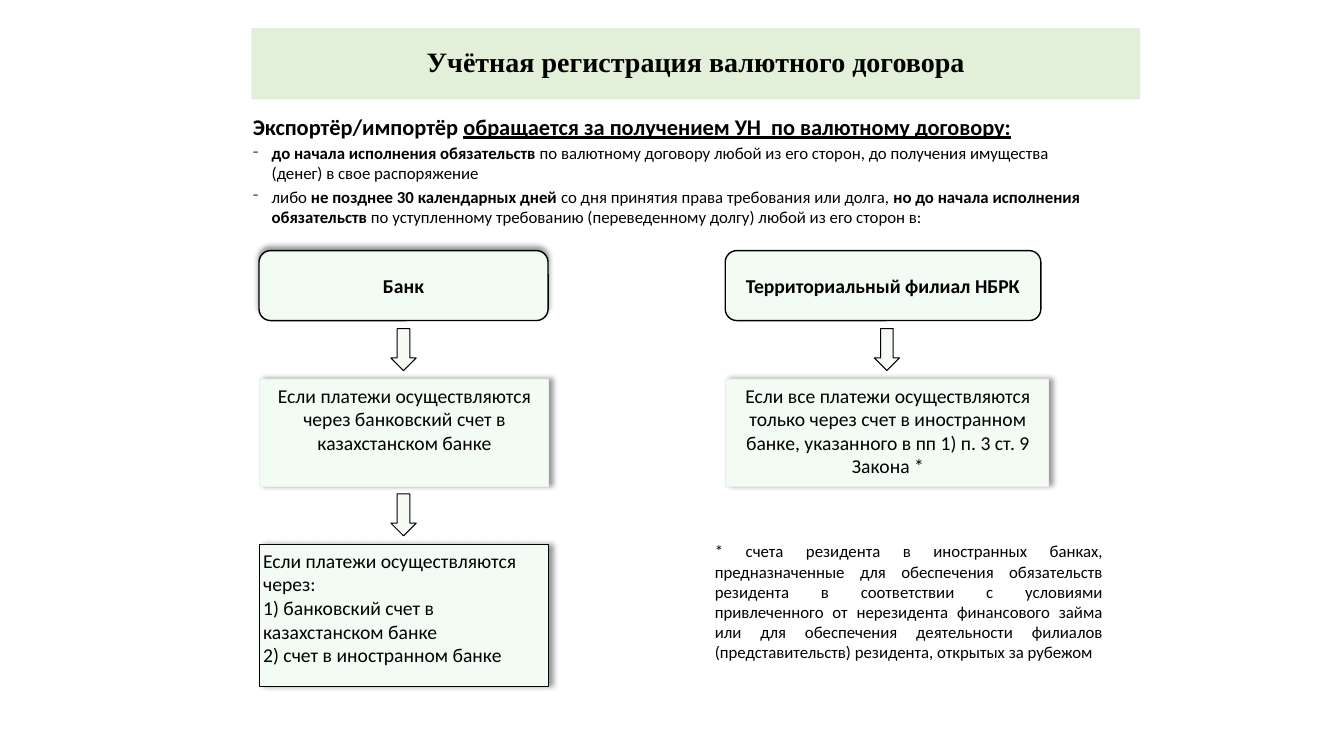
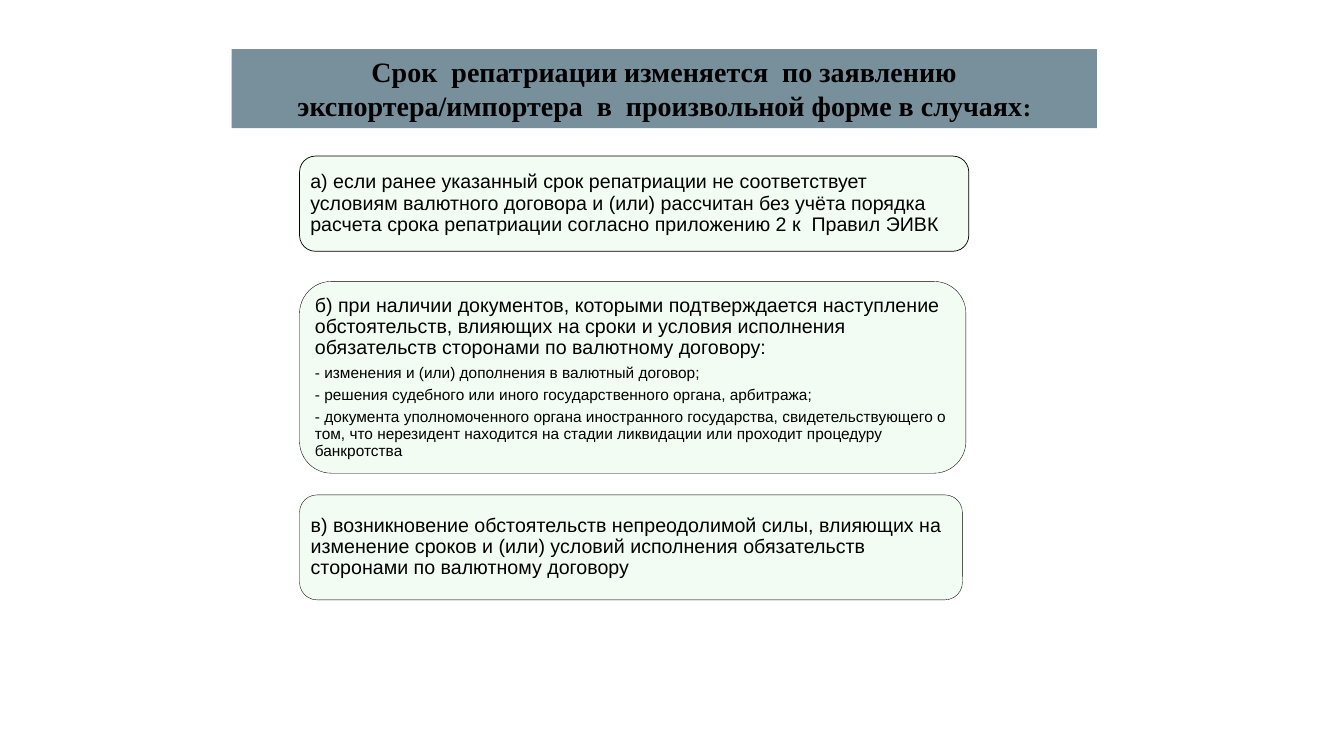
from lxml import etree
from pptx import Presentation
from pptx.dml.color import RGBColor
from pptx.enum.shapes import MSO_SHAPE
from pptx.enum.text import MSO_ANCHOR, PP_ALIGN
from pptx.oxml.ns import qn
from pptx.util import Pt

RECT, ROUNDED, DOWN_ARROW = MSO_SHAPE.RECTANGLE, MSO_SHAPE.ROUNDED_RECTANGLE, MSO_SHAPE.DOWN_ARROW
TOP, MIDDLE = MSO_ANCHOR.TOP, MSO_ANCHOR.MIDDLE
LEFT, CENTER, JUSTIFY = PP_ALIGN.LEFT, PP_ALIGN.CENTER, PP_ALIGN.JUSTIFY

COLORS = {
    "text": "000000",
    "outline": "000000",
    "soft_outline": "EEEEEE",
    "panel": "F2FCF2",
    "arrow": "F6FBF3",
    "green_band": "E2F0D9",
    "slate_band": "78909C",
    "dash": "376092",
    "shadow": "000000",
}
BODY_FONT, TITLE_FONT, CASE_FONT = "Calibri", "Times New Roman", "Arial"
INSETS = (7.2, 3.6, 7.2, 3.6)
CARD_INSETS = (3, 3.6, 1.5, 3.6)
CASE_INSETS = (4.3, 4.3, 4.3, 4.3)
SHADOW_RIGHT, SHADOW_UP = 0, 270
EMU_PER_POINT = 12700


def rgb(name):
    return RGBColor.from_string(COLORS[name])


def add_shadow(shape, angle):
    effects = shape._element.spPr.find(qn("a:effectLst"))
    shadow = etree.SubElement(
        effects, qn("a:outerShdw"), blurRad=str(4 * EMU_PER_POINT),
        dist=str(3 * EMU_PER_POINT), dir=str(angle * 60000), algn="ctr", rotWithShape="0")
    color = etree.SubElement(shadow, qn("a:srgbClr"), val=COLORS["shadow"])
    etree.SubElement(color, qn("a:alpha"), val="40000")


def add_panel(slide, kind, box, fill, outline=None, weight=1, shadow=None):
    panel = slide.shapes.add_shape(kind, *map(Pt, box))
    panel.shadow.inherit = False
    panel.fill.solid()
    panel.fill.fore_color.rgb = rgb(fill)
    if outline:
        panel.line.color.rgb = rgb(outline)
        panel.line.width = Pt(weight)
    else:
        panel.line.fill.background()
    if shadow is not None:
        add_shadow(panel, shadow)
    return panel


def prepare_frame(shape, anchor=TOP, insets=INSETS):
    frame = shape.text_frame
    frame.word_wrap = True
    frame.vertical_anchor = anchor
    frame.margin_left, frame.margin_top, frame.margin_right, frame.margin_bottom = map(Pt, insets)
    return frame


def style_paragraph(paragraph, size, font=BODY_FONT, bold=False, align=LEFT):
    paragraph.alignment = align
    for run in paragraph.runs:
        run.font.size = Pt(size)
        run.font.name = font
        run.font.bold = bold
        run.font.color.rgb = rgb("text")


def fill_text(shape, text, size, font=BODY_FONT, bold=False, align=LEFT, anchor=TOP, insets=INSETS):
    frame = prepare_frame(shape, anchor, insets)
    frame.text = text
    for paragraph in frame.paragraphs:
        style_paragraph(paragraph, size, font, bold, align)
    return frame


def add_title(slide, box, band, text, spacing=1.0):
    title = add_panel(slide, RECT, box, band)
    frame = fill_text(title, text, 20, TITLE_FONT, True, CENTER, MIDDLE)
    frame.paragraphs[0].line_spacing = spacing
    return frame


def add_dash(paragraph, hanging):
    properties = paragraph._p.get_or_add_pPr()
    properties.set("marL", str(int(Pt(hanging))))
    properties.set("indent", str(-int(Pt(hanging))))
    color = etree.SubElement(properties, qn("a:buClr"))
    etree.SubElement(color, qn("a:srgbClr"), val=COLORS["dash"])
    etree.SubElement(properties, qn("a:buChar"), char="-")


def add_runs(paragraph, parts, size):
    for text, _ in parts:
        paragraph.add_run().text = text
    style_paragraph(paragraph, size)
    for run, (_, bold) in zip(paragraph.runs, parts):
        run.font.bold = bold


def add_intro(slide, box, heading, terms):
    frame = prepare_frame(slide.shapes.add_textbox(*map(Pt, box)))
    opening = frame.paragraphs[0]
    add_runs(opening, [(part, True) for part in heading], 16)
    opening.runs[-1].font.underline = True
    for parts in terms:
        term = frame.add_paragraph()
        add_dash(term, 13.5)
        add_runs(term, parts, 12)
        term.space_before = Pt(2.4)


def add_arrow(slide, center, top, gap):
    width, height = 18, 30
    box = (center - width / 2, top + (gap - height) / 2, width, height)
    add_panel(slide, DOWN_ARROW, box, "arrow", "outline", 0.75)


def add_route(slide, box, head, head_width, head_shadow, cards):
    left, top, width = box
    gap, head_height = 41.5, 50
    head_box = (left, top, head_width, head_height)
    holder = add_panel(slide, ROUNDED, head_box, "panel", "outline", 1, head_shadow)
    fill_text(holder, head, 14, bold=True, align=CENTER, anchor=MIDDLE)
    bottom = top + head_height
    for text, height, outline, align in cards:
        add_arrow(slide, left + width / 2, bottom, gap)
        card = add_panel(slide, RECT, (left, bottom + gap, width, height),
                         "panel", outline, 0.25, SHADOW_RIGHT)
        fill_text(card, text, 14, align=align, insets=CARD_INSETS)
        bottom += gap + height


def add_footnote(slide, box, text):
    frame = fill_text(slide.shapes.add_textbox(*map(Pt, box)), text, 12, align=JUSTIFY)
    frame.paragraphs[0]._p.get_or_add_pPr().set("marL", str(int(Pt(6.5))))


def add_case(slide, box, weight, statement, details=()):
    case = add_panel(slide, ROUNDED, box, "panel", "outline", weight)
    frame = prepare_frame(case, MIDDLE, CASE_INSETS)
    frame.text = "\n".join((statement, *details))
    for number, paragraph in enumerate(frame.paragraphs):
        size = 11 if number else 14
        style_paragraph(paragraph, size, CASE_FONT)
        paragraph.line_spacing = 0.9
        paragraph.space_after = Pt(round(size * 0.35, 2))


def build_registration(slide):
    add_intro(
        slide, (173.5, 77, 615, 430),
        ("Экспортёр/импортёр ", "обращается за получением УН  по валютному договору:"),
        [
            [("до начала исполнения обязательств ", True),
             ("по валютному договору любой из его сторон, до получения имущества (денег) "
              "в свое распоряжение", False)],
            [("либо ", False),
             ("не позднее 30 календарных дней ", True),
             ("со дня принятия права требования или долга, ", False),
             ("но до начала исполнения обязательств ", True),
             ("по уступленному требованию (переведенному долгу) любой из его сторон в:", False)],
        ])
    add_route(
        slide, (185, 179, 206.5), "Банк", 206.5, SHADOW_UP,
        [
            ("Если платежи осуществляются через банковский счет в казахстанском банке",
             76.5, "soft_outline", CENTER),
            ("Если платежи осуществляются через:\n1) банковский счет в казахстанском банке\n"
             "2) счет в иностранном банке", 101.5, "outline", LEFT),
        ])
    add_route(
        slide, (518, 179, 231), "Территориальный филиал НБРК", 225.5, None,
        [("Если все платежи осуществляются только через счет в иностранном банке, "
          "указанного в пп 1) п. 3 ст. 9 Закона *", 76.5, "soft_outline", CENTER)])
    add_footnote(
        slide, (497, 383, 298, 106),
        "* счета резидента в иностранных банках, предназначенные для обеспечения обязательств "
        "резидента в соответствии с условиями привлеченного от нерезидента финансового займа "
        "или для обеспечения деятельности филиалов (представительств) резидента, "
        "открытых за рубежом")
    add_title(slide, (179.5, 20, 635, 51), "green_band",
              "Учётная регистрация валютного договора", 0.9)


def build_repatriation(slide):
    title = add_title(
        slide, (165.5, 35, 618, 56.5), "slate_band",
        "Срок  репатриации изменяется  по заявлению экспортера/импортера  "
        "в  произвольной форме в случаях")
    colon = title.paragraphs[0].add_run()
    colon.text = ":"
    style_paragraph(title.paragraphs[0], 20, TITLE_FONT, True, CENTER)
    colon.font.size = Pt(18)
    left = 214
    add_case(
        slide, (left, 111.5, 478, 68), 0.5,
        "а) если ранее указанный срок репатриации не соответствует условиям валютного договора "
        "и (или) рассчитан без учёта порядка расчета срока репатриации согласно приложению 2 "
        "к  Правил ЭИВК")
    add_case(
        slide, (left, 201, 476, 137), 0.25,
        "б) при наличии документов, которыми подтверждается наступление обстоятельств, "
        "влияющих на сроки и условия исполнения обязательств сторонами по валютному договору:",
        ("- изменения и (или) дополнения в валютный договор;",
         "- решения судебного или иного государственного органа, арбитража;",
         "- документа уполномоченного органа иностранного государства, свидетельствующего о том, "
         "что нерезидент находится на стадии ликвидации или проходит процедуру банкротства"))
    add_case(
        slide, (left, 353.5, 473.5, 75), 0.25,
        "в) возникновение обстоятельств непреодолимой силы, влияющих на изменение сроков "
        "и (или) условий исполнения обязательств сторонами по валютному договору")


def main():
    deck = Presentation()
    deck.slide_width, deck.slide_height = Pt(960), Pt(540)
    for build in (build_registration, build_repatriation):
        build(deck.slides.add_slide(deck.slide_layouts[6]))
    deck.save("out.pptx")


if __name__ == "__main__":
    main()
